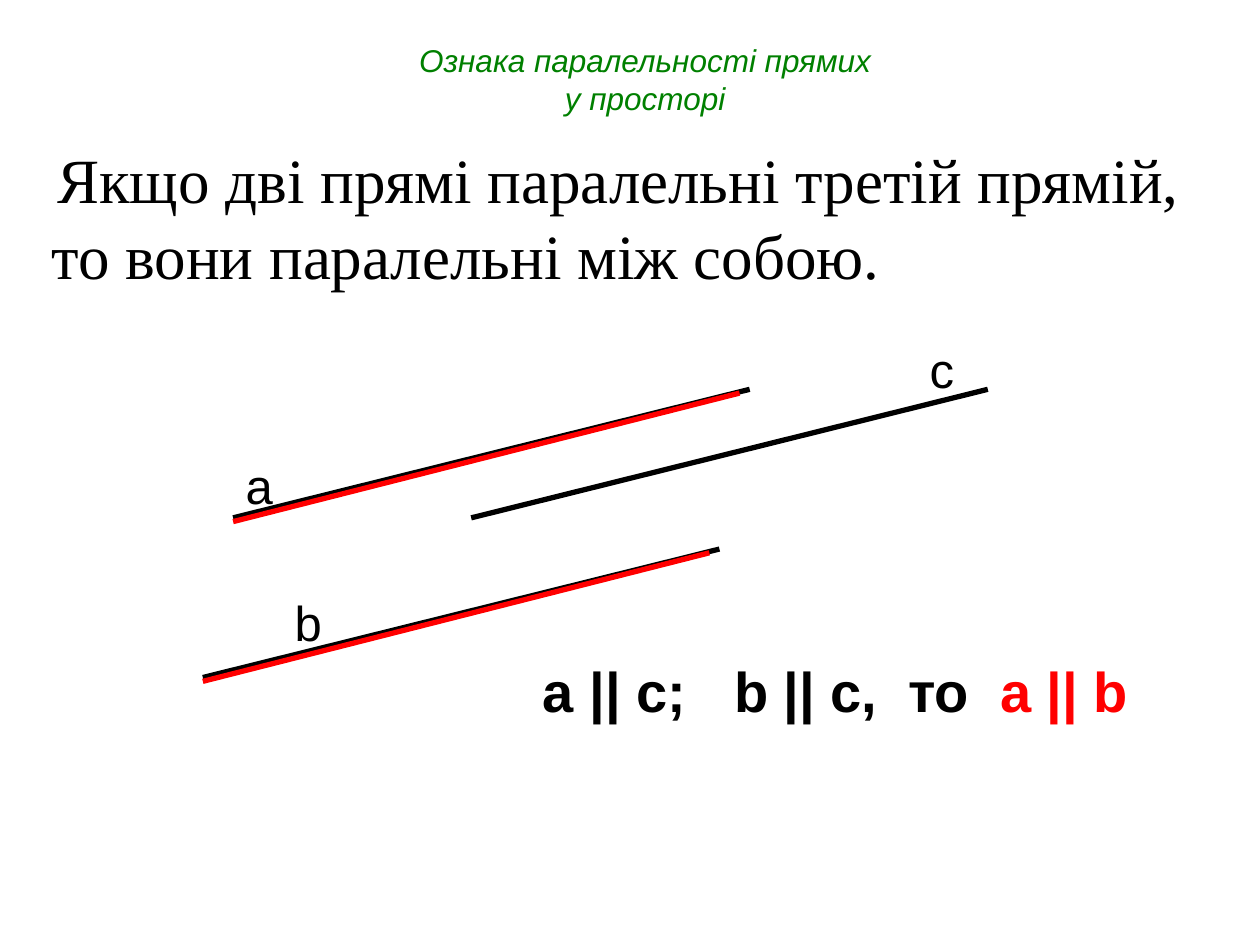
"""Build a slide on the criterion for parallel lines in space."""
from lxml import etree
from pptx import Presentation
from pptx import util as u
from pptx.dml.color import RGBColor
from pptx.enum import shapes, text
from pptx.oxml.ns import qn

WIDTH, HEIGHT = u.Inches(10), u.Inches(7.5)
BLACK = RGBColor(0, 0, 0)
RED = RGBColor(255, 0, 0)
GREEN = RGBColor(0, 128, 0)
LEFT, CENTER = text.PP_ALIGN.LEFT, text.PP_ALIGN.CENTER
RISE = 13.6
BLACK_RUN, RED_RUN, RED_DROP = 41, 40.2, 0.4
LINE_A, LINE_B, LINE_C = (18.5, 54.8), (16.1, 71.7), (37.4, 54.8)


def across(share):
    """Turn a percentage of the slide width into a length."""
    return int(WIDTH * share / 100)


def down(share):
    """Turn a percentage of the slide height into a length."""
    return int(HEIGHT * share / 100)


def add_text(page, area, paragraphs, size, font="Arial", bold=False,
             italic=False, tabs=()):
    """Add a text box of (alignment, [(words, colour), ...]) paragraphs."""
    left, top, width, height = area
    box = page.shapes.add_textbox(across(left), down(top), across(width), down(height))
    frame = box.text_frame
    frame.word_wrap = True
    for index, (alignment, spans) in enumerate(paragraphs):
        para = frame.add_paragraph() if index else frame.paragraphs[0]
        para.alignment = alignment
        if tabs:
            stops = etree.SubElement(para._p.get_or_add_pPr(), qn("a:tabLst"))
            for stop in tabs:
                etree.SubElement(stops, qn("a:tab"), pos=str(across(stop)), algn="l")
        for words, colour in spans:
            span = para.add_run()
            span.text = words
            span.font.name = font
            span.font.size = u.Pt(size)
            span.font.bold = bold
            span.font.italic = italic
            span.font.color.rgb = colour
    return box


def add_line(page, start, run, colour, drop=0):
    """Draw a rising line from its lower left end."""
    left, low = start[0], start[1] + drop
    line = page.shapes.add_connector(
        shapes.MSO_CONNECTOR.STRAIGHT, across(left), down(low),
        across(left + run), down(low - RISE))
    line.line.color.rgb = colour
    line.line.width = u.Pt(3)
    etree.SubElement(line._element.spPr, qn("a:effectLst"))


def main():
    """Compose the slide and save it."""
    deck = Presentation()
    deck.slide_width, deck.slide_height = WIDTH, HEIGHT
    page = deck.slides.add_slide(deck.slide_layouts[6])

    add_text(page, (13, 3.73, 76.4, 10.53),
             [(CENTER, [("Ознака паралельності прямих", GREEN)]),
              (CENTER, [("у просторі", GREEN)])], 18, italic=True)
    for start in (LINE_A, LINE_C, LINE_B):
        add_line(page, start, BLACK_RUN, BLACK)
    for name, left, top in (("а", 18.5, 47.5), ("b", 22.4, 62), ("c", 72.8, 35.3)):
        add_text(page, (left, top, 4.2, 7.6), [(LEFT, [(name, BLACK)])], 28)
    add_text(page, (42.1, 68.8, 49, 8.4),
             [(LEFT, [("a || c;\tb || c,\tто\t", BLACK), ("a || b", RED)])],
             32, bold=True, tabs=(15.2, 29, 36.3))
    for start in (LINE_A, LINE_B):
        add_line(page, start, RED_RUN, RED, RED_DROP)
    add_text(page, (3.1, 14.27, 93.2, 17.47),
             [(CENTER, [("Якщо дві прямі паралельні третій прямій, ", BLACK)]),
              (LEFT, [("то вони паралельні між собою.", BLACK)])],
             36, font="Times New Roman")
    deck.save("out.pptx")


if __name__ == "__main__":
    main()
